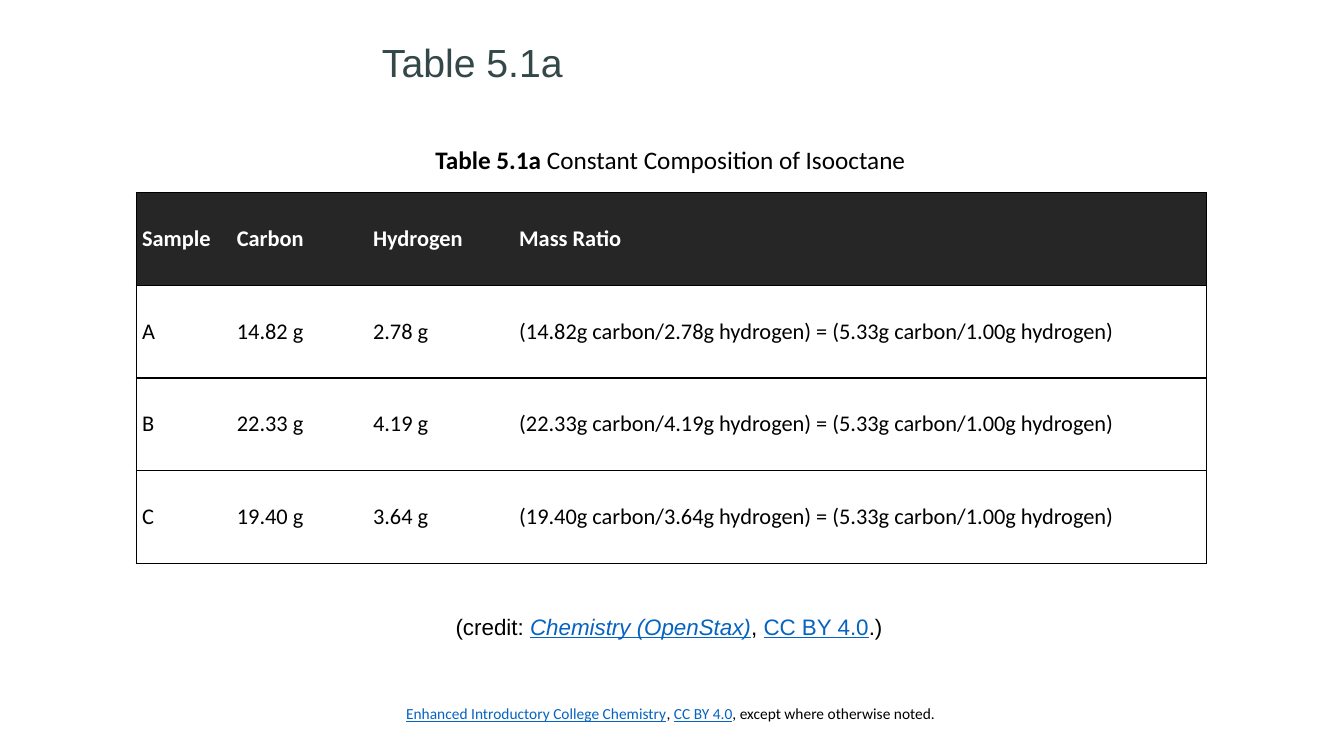
import pptx
import pptx.dml.color
import pptx.enum.text
import pptx.oxml
import pptx.oxml.ns
import pptx.util

Inches = pptx.util.Inches
Pt = pptx.util.Pt
ANCHOR = pptx.enum.text.MSO_ANCHOR
BLACK, WHITE, DARK, LINK, TITLE = "000000", "FFFFFF", "262626", "0563C1", "354849"


def rgb(value):
    return pptx.dml.color.RGBColor.from_string(value)


def add_run(p, text, font="Calibri", size=16, color=BLACK, bold=False, italic=False, underline=False):
    r = p.add_run()
    r.text = text
    r.font.name = font
    r.font.size = Pt(size)
    r.font.color.rgb = rgb(color)
    r.font.bold = bold
    r.font.italic = italic
    r.font.underline = underline


class SlideBuilder:
    """Holds the slide and the shared style of its text boxes and table."""

    def __init__(self, s, border=1):
        self.s = s
        self.border = border

    def text(self, box, runs, anchor=ANCHOR.TOP, spacing=None, **style):
        tf = self.s.shapes.add_textbox(*map(Inches, box)).text_frame
        tf.word_wrap = True
        tf.vertical_anchor = anchor
        p = tf.paragraphs[0]
        p.line_spacing = spacing
        for text, extra in runs:
            add_run(p, text, **{**style, **extra})

    def edge(self, cell, side, visible):
        fill = f'<a:solidFill><a:srgbClr val="{BLACK}"/></a:solidFill>' if visible else "<a:noFill/>"
        cell._tc.get_or_add_tcPr().append(pptx.oxml.parse_xml(
            f'<a:ln{side} {pptx.oxml.ns.nsdecls("a")} w="{Pt(self.border)}">{fill}</a:ln{side}>'))

    def table(self, left, top, widths, row_height, rows):
        shape = self.s.shapes.add_table(
            len(rows), len(widths), Inches(left), Inches(top),
            Inches(sum(widths)), Inches(row_height * len(rows)))
        table = shape.table
        table.horz_banding = False
        for column, width in zip(table.columns, widths):
            column.width = Inches(width)
        for i, row in enumerate(rows):
            table.rows[i].height = Inches(row_height)
            header = i == 0
            for j, text in enumerate(row):
                cell = table.cell(i, j)
                cell.vertical_anchor = ANCHOR.MIDDLE
                cell.margin_left = cell.margin_right = Inches(0.06)
                cell.margin_top = cell.margin_bottom = Inches(0.03)
                self.edge(cell, "L", j == 0)
                self.edge(cell, "R", j == len(row) - 1)
                self.edge(cell, "T", True)
                self.edge(cell, "B", True)
                cell.fill.solid()
                cell.fill.fore_color.rgb = rgb(DARK if header else WHITE)
                add_run(cell.text_frame.paragraphs[0], text,
                        color=WHITE if header else BLACK, bold=header)


def main():
    prs = pptx.Presentation()
    prs.slide_width, prs.slide_height = Inches(13.33), Inches(7.5)
    slide = SlideBuilder(prs.slides.add_slide(prs.slide_layouts[6]))
    link = {"color": LINK, "underline": True}

    slide.text((3.93, 6.94, 7.07, 0.4), [
        ("Enhanced Introductory College Chemistry", link), (", ", {}),
        ("CC BY 4.0", link), (", except where otherwise noted.", {})], size=11)
    slide.text((3.69, 0.2, 4.3, 0.7), [("Table 5.1a", {})], anchor=ANCHOR.BOTTOM,
               spacing=0.9, font="Arial", size=28, color=TITLE)
    slide.text((4.22, 1.38, 4.89, 0.4), [
        ("Table 5.1a ", {"bold": True}), ("Constant Composition of Isooctane", {})], size=18)

    samples = [("A", "14.82", "2.78"), ("B", "22.33", "4.19"), ("C", "19.40", "3.64")]
    rows = [("Sample", "Carbon", "Hydrogen", "Mass Ratio")]
    rows += [(name, f"{c} g", f"{h} g",
              f"({c}g carbon/{h}g hydrogen) = (5.33g carbon/1.00g hydrogen)")
             for name, c, h in samples]
    slide.table(1.35, 1.91, (0.94, 1.35, 1.45, 6.88), 0.92, rows)

    slide.text((4.42, 6.03, 4.49, 0.37), [
        ("(credit: ", {}), ("Chemistry (OpenStax)", {**link, "italic": True}), (", ", {}),
        ("CC BY 4.0", link), (".)", {})], font="Arial")
    prs.save("out.pptx")


if __name__ == "__main__":
    main()
